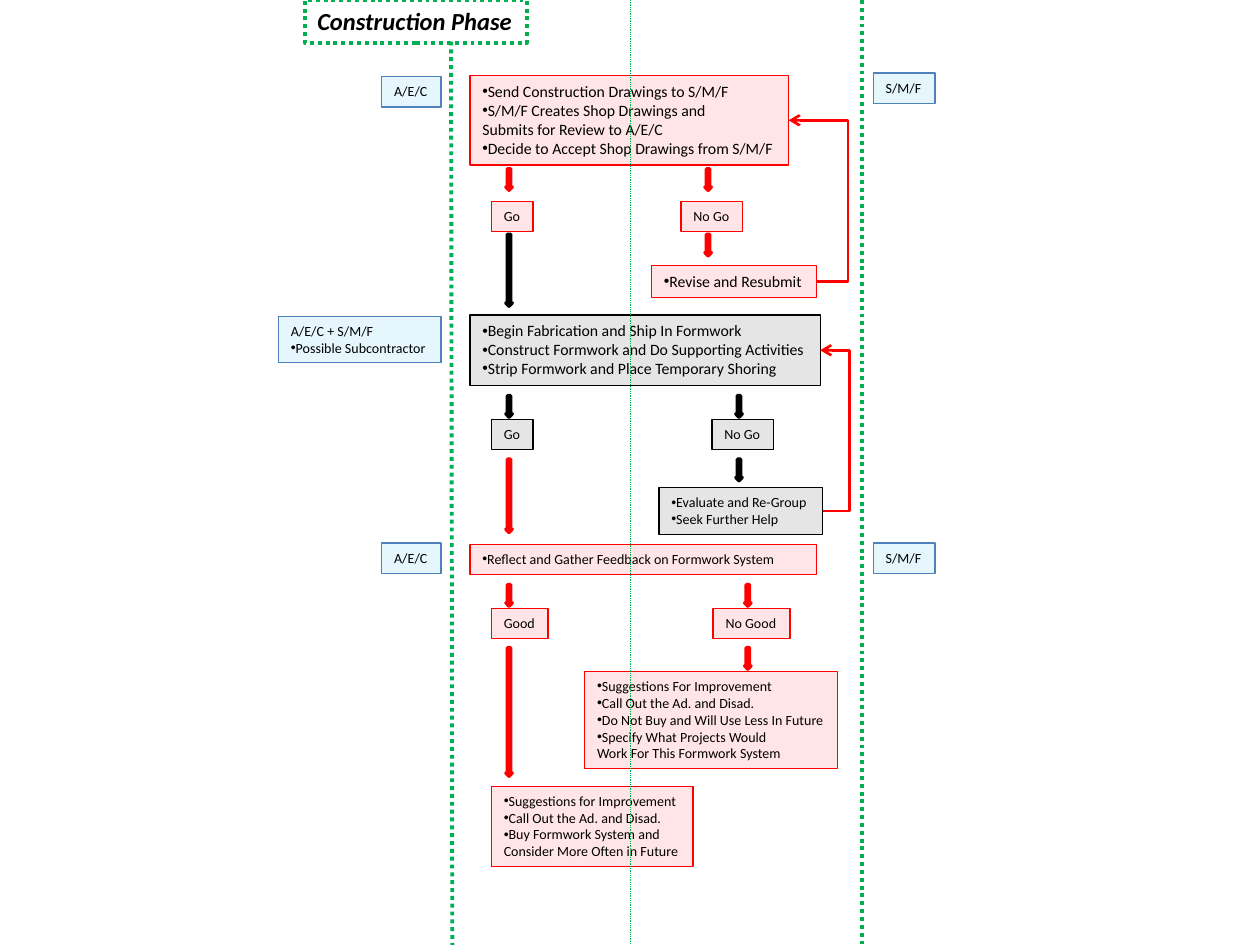
import pptx
import pptx.util
import pptx.dml.color
import pptx.enum.dml
import pptx.enum.shapes
import pptx.enum.text
import pptx.oxml
import pptx.oxml.ns

HUES = {"red": "FF0000", "black": "000000", "green": "00B050",
        "sky": "00B0F0", "blue": "4F81BD"}
WIDE, HIGH = 10, 7.5
COLS, ROWS = 100, 75
LEFT, YES, LOW = 37.3, 2.85, 2.4


def col(n):
    return pptx.util.Inches(n * WIDE / COLS)


def row(n):
    return pptx.util.Inches(n * HIGH / ROWS)


def paint(part, hue):
    part.fore_color.rgb = pptx.dml.color.RGBColor.from_string(HUES[hue])


def add(node, tag, **attrs):
    item = pptx.oxml.ns.qn(tag)
    child = node.makeelement(item, attrs)
    node.append(child)
    return child


def edge(line, hue, width, dots=False):
    line.fill.solid()
    paint(line.fill, hue)
    line.width = pptx.util.Pt(width)
    if dots:
        line.dash_style = pptx.enum.dml.MSO_LINE.ROUND_DOT


def label(page, box, lines, size=8, bold=False, wrap=False):
    x, y, w, h = box
    shape = page.shapes.add_textbox(col(x), row(y), col(w), row(h))
    frame = shape.text_frame
    frame.text = "\n".join(line.lstrip("•") for line in lines)
    frame.word_wrap = wrap
    frame.auto_size = pptx.enum.text.MSO_AUTO_SIZE.SHAPE_TO_FIT_TEXT
    for para, line in zip(frame.paragraphs, lines):
        if line.startswith("•"):
            props = para._p.get_or_add_pPr()
            add(props, "a:buFont", typeface="Arial")
            add(props, "a:buChar", char="•")
        for run in para.runs:
            run.font.name = "Calibri"
            run.font.size = pptx.util.Pt(size)
            run.font.bold = run.font.italic = bold
            paint_font(run.font)
    return shape


def paint_font(font):
    font.fill.solid()
    paint(font.fill, "black")


def card(page, box, lines, hue, rim=None, size=8, wrap=False):
    shape = label(page, box, lines, size, wrap=wrap)
    shape.fill.solid()
    paint(shape.fill, hue)
    tint = shape._element.spPr.find(".//" + pptx.oxml.ns.qn("a:srgbClr"))
    add(tint, "a:alpha", val="10000")
    edge(shape.line, rim or hue, 0.75)


def arrow(page, x, y, hue, tall=1.7, core=None):
    kind = pptx.enum.shapes.MSO_SHAPE.DOWN_ARROW
    shape = page.shapes.add_shape(kind, col(x), row(y), col(0.5), row(tall))
    shape.shadow.inherit = False
    shape.fill.solid()
    paint(shape.fill, core or hue)
    edge(shape.line, hue, 2)


def link(page, kind, start, end, hue, width, dots=False):
    line = page.shapes.add_connector(
        kind, col(start[0]), row(start[1]), col(end[0]), row(end[1]))
    edge(line.line, hue, width, dots)
    add(line._element.spPr, "a:effectLst")
    return line


def loop(page, start, end, bend):
    kind = pptx.enum.shapes.MSO_CONNECTOR.ELBOW
    line = link(page, kind, start, end, "red", 1.5)
    share = round((start[0] - bend) / (start[0] - end[0]) * 100000)
    form = line._element.spPr.find(pptx.oxml.ns.qn("a:prstGeom"))
    guides = form.find(pptx.oxml.ns.qn("a:avLst"))
    if guides is None:
        guides = add(form, "a:avLst")
    add(guides, "a:gd", name="adj1", fmla=f"val {share}")
    add(line.line._get_or_add_ln(), "a:tailEnd", type="arrow")


def stage(page, box, plan):
    x, y, w, h = box
    hue, fall = plan["hue"], plan["fall"]
    step, pick, drop, out = (y + n for n in plan["rows"])
    go, stop = x + YES, x + plan["no"]
    card(page, box, plan["tasks"], hue, size=plan["size"], wrap="loop" not in plan)

    for place in (go, stop):
        arrow(page, place, step, hue)
    arrow(page, stop, drop, hue, core=plan.get("core"))
    arrow(page, go, drop, fall[0], fall[1])

    (yes, wide), (nay, broad) = plan["picks"]
    card(page, (x + 1.7, pick, wide, LOW), [yes], hue)
    card(page, (stop + 0.55 - broad / 2, pick, broad, LOW), [nay], hue)

    shift, broad, tall = plan["fix"]
    card(page, (x + shift, out, broad, tall), plan["notes"], hue,
         size=plan.get("small", 8))
    if "loop" in plan:
        loop(page, (x + shift + broad, out + tall / 2), (x + w, y + h / 2),
             x + plan["loop"])


def roles(page, x, tags):
    for y, w, h, lines in tags:
        card(page, (x, y, w, h), lines, "sky", "blue")


def role_left(page, edge_x, tags):
    for tag in tags:
        roles(page, edge_x - tag[1], [tag])


def title(page, box):
    shape = label(page, box, ["Construction Phase"], 14, True)
    edge(shape.line, "green", 2.25, True)


def lanes(page, box):
    x, y, w, h = box
    kind = pptx.enum.shapes.MSO_CONNECTOR.STRAIGHT
    for top, foot, start, width in ((x + w, x + w, y, 2.25),
                                    (x, x + 0.1, y + 3.3, 2.25),
                                    (COLS / 2, COLS / 2, y, 0.5)):
        link(page, kind, (top, start), (foot, y + h), "green", width, True)


SHOP = dict(
    hue="red", size=9, small=9, rows=(7.4, 10, 12.6, 15.1), no=18.65,
    fall=("black", 5.7), core="black", picks=(("Go", 3.3), ("No Go", 4.9)),
    fix=(14.4, 13.1, 2.5), loop=30,
    tasks=["•Send Construction Drawings to S/M/F",
           "•S/M/F Creates Shop Drawings and",
           "Submits for Review to A/E/C",
           "•Decide to Accept Shop Drawings from S/M/F"],
    notes=["•Revise and Resubmit"])
BUILD = dict(
    hue="black", size=9, rows=(6.4, 8.3, 11.45, 13.7), no=21.1,
    fall=("red", 5.8), picks=(("Go", 3.3), ("No Go", 4.9)),
    fix=(15, 13, 3.7), loop=30.1,
    tasks=["•Begin Fabrication and Ship In Formwork",
           "•Construct Formwork and Do Supporting Activities",
           "•Strip Formwork and Place Temporary Shoring"],
    notes=["•Evaluate and Re-Group", "•Seek Further Help"])
REVIEW = dict(
    hue="red", size=8, rows=(3.2, 5.1, 8.2, 10.1), no=21.8,
    fall=("red", 10.2), picks=(("Good", 4.5), ("No Good", 6.1)),
    fix=(9.1, 20.1, 7.7),
    tasks=["•Reflect and Gather Feedback on Formwork System"],
    notes=["•Suggestions For Improvement", "•Call Out the Ad. and Disad.",
           "•Do Not Buy and Will Use Less In Future",
           "•Specify What Projects Would", "Work For This Formwork System"])
BUY = ["•Suggestions for Improvement", "•Call Out the Ad. and Disad.",
       "•Buy Formwork System and", "Consider More Often in Future"]


def main():
    deck = pptx.Presentation()
    deck.slide_width, deck.slide_height = col(COLS), row(ROWS)
    page = deck.slides.add_slide(deck.slide_layouts[6])
    title(page, (24.2, 0, 17.6, 3.4))
    stage(page, (LEFT, 6, 25.3, 7.1), SHOP)
    stage(page, (LEFT, 25, 27.8, 5.6), BUILD)
    stage(page, (LEFT, 43.2, 27.5, LOW), REVIEW)
    card(page, (LEFT + 1.7, 62.4, 16, 6.4), BUY, "red")
    lanes(page, (35.8, 0, 32.6, ROWS))
    role_left(page, 35, [(6.1, 4.7, LOW, ["A/E/C"]),
                         (25.1, 12.9, 3.7, ["A/E/C + S/M/F", "•Possible Subcontractor"]),
                         (43.1, 4.7, LOW, ["A/E/C"])])
    roles(page, 69.3, [(y, 4.9, LOW, ["S/M/F"]) for y in (5.8, 43.1)])
    deck.save("out.pptx")


if __name__ == "__main__":
    main()
